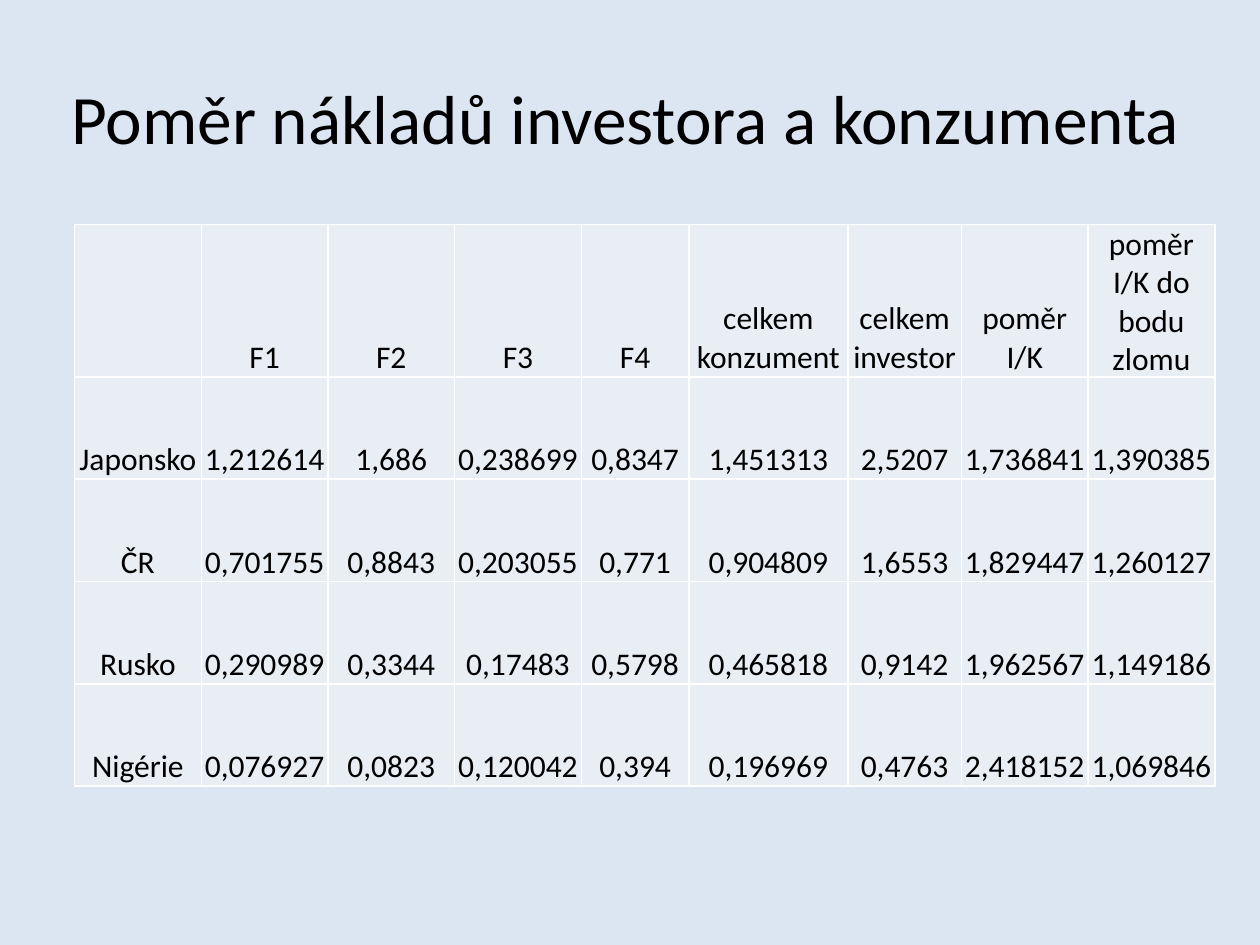
from typing import NamedTuple

from lxml.etree import SubElement as Sub
from pptx import Presentation
from pptx.dml.color import RGBColor
from pptx.enum.text import MSO_ANCHOR as Anchor, PP_ALIGN as Align
from pptx.oxml.ns import qn
from pptx.util import Pt

FONT = "Calibri"
INK, PAPER, CELL, RULE = "000000", "DCE6F2", "E9EDF4", "FFFFFF"
COLS = (72.4, 72.4, 72.4, 72.4, 61.5, 90.8, 64.9, 72.4, 72.4)
HEAD = ("", "F1", "F2", "F3", "F4", "celkem konzument", "celkem investor",
        "poměr I/K", "poměr I/K do bodu zlomu")
HEAD_H, ROW_H = 79.2, 58.5


class Land(NamedTuple):
    name: str
    costs: tuple[str, ...]


LANDS = (
    Land("Japonsko", ("1,212614", "1,686", "0,238699", "0,8347",
                      "1,451313", "2,5207", "1,736841", "1,390385")),
    Land("ČR", ("0,701755", "0,8843", "0,203055", "0,771",
                "0,904809", "1,6553", "1,829447", "1,260127")),
    Land("Rusko", ("0,290989", "0,3344", "0,17483", "0,5798",
                   "0,465818", "0,9142", "1,962567", "1,149186")),
    Land("Nigérie", ("0,076927", "0,0823", "0,120042", "0,394",
                     "0,196969", "0,4763", "2,418152", "1,069846")),
)


def paint(fill, tone: str) -> None:
    fill.solid()
    fill.fore_color.rgb = RGBColor.from_string(tone)


def write(frame, text: str, size: float) -> None:
    frame.text = text
    par = frame.paragraphs[0]
    par.alignment = Align.CENTER
    par.font.size = Pt(size)
    for run in par.runs:
        run.font.name, run.font.size, run.font.bold = FONT, Pt(size), False
        paint(run.font.fill, INK)


def edge(cell) -> None:
    """Rule all four sides; the lines must come before the fill."""
    props = cell._tc.get_or_add_tcPr()
    for side in ("lnL", "lnR", "lnT", "lnB"):
        line = Sub(props, qn(f"a:{side}"), w=str(Pt(1)))
        Sub(Sub(line, qn("a:solidFill")), qn("a:srgbClr"), val=RULE)


def draw_cell(cell, text: str) -> None:
    cell.margin_left = cell.margin_right = cell.margin_top = Pt(0.7)
    cell.margin_bottom = Pt(0)
    cell.vertical_anchor = Anchor.BOTTOM
    edge(cell)
    paint(cell.fill, CELL)
    write(cell.text_frame, text, 18)


def draw_title(slide, text: str) -> None:
    box = slide.shapes.add_textbox(Pt(8.6), Pt(21.6), Pt(697.7), Pt(90))
    box.text_frame.word_wrap = True
    box.text_frame.vertical_anchor = Anchor.MIDDLE
    write(box.text_frame, text, 39.6)


def draw_table(slide, rows: list[tuple[str, ...]]) -> None:
    high = HEAD_H + ROW_H * len(LANDS)
    table = slide.shapes.add_table(len(rows), len(COLS), Pt(42.6), Pt(128.2),
                                   Pt(sum(COLS)), Pt(high)).table
    table.first_row = table.horz_banding = False
    for col, wide in zip(table.columns, COLS):
        col.width = Pt(wide)
    for i, row in enumerate(rows):
        table.rows[i].height = Pt(ROW_H if i else HEAD_H)
        for j, text in enumerate(row):
            draw_cell(table.cell(i, j), text)


def main() -> None:
    deck = Presentation()
    deck.slide_width, deck.slide_height = Pt(720), Pt(540)
    slide = deck.slides.add_slide(deck.slide_layouts[6])
    paint(slide.background.fill, PAPER)

    # Title
    draw_title(slide, "Poměr nákladů investora a konzumenta")

    # Cost table
    draw_table(slide, [HEAD] + [(land.name, *land.costs) for land in LANDS])

    deck.save("out.pptx")


if __name__ == "__main__":
    main()
